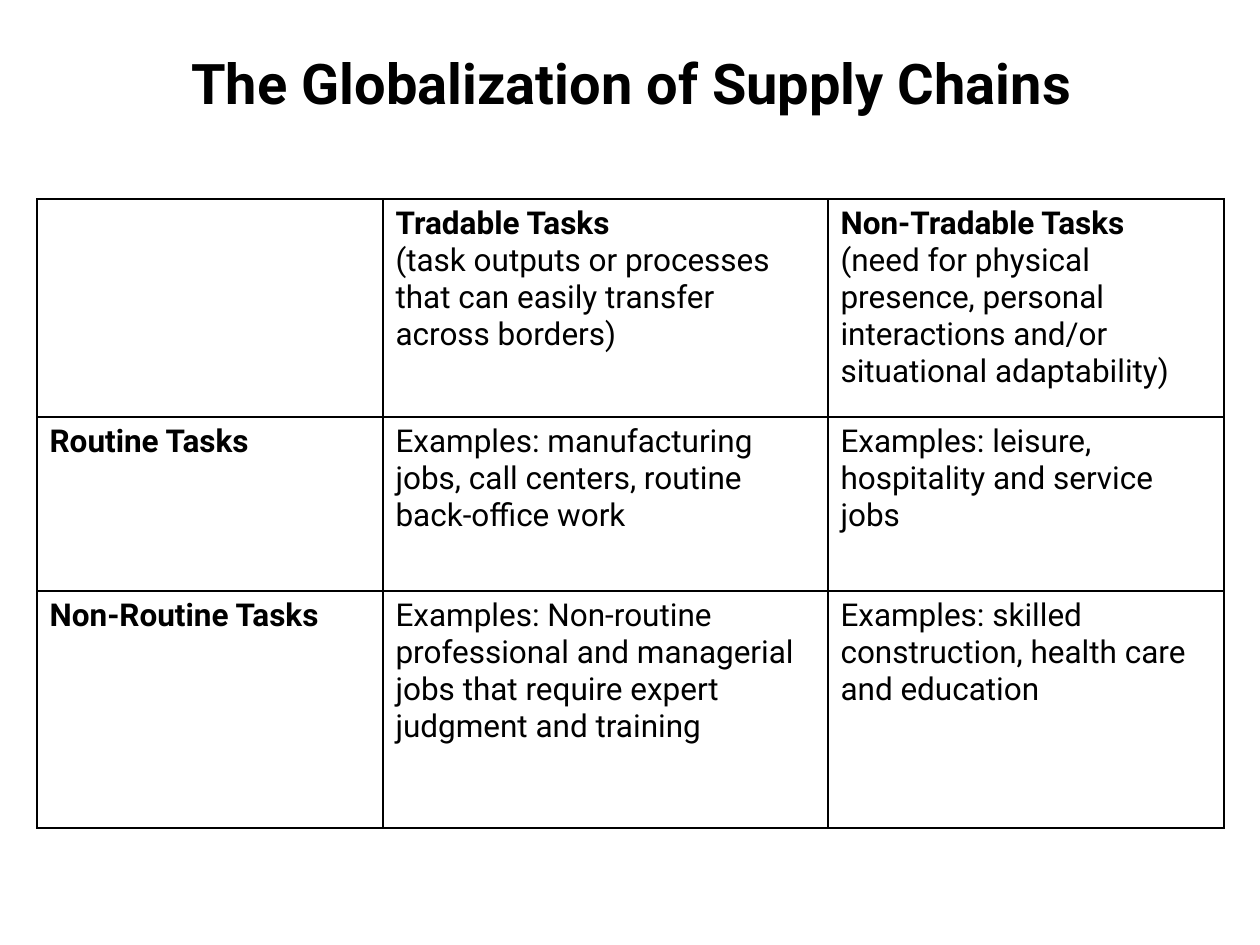
"""Build a slide with a grid of task types in global supply chains."""
from lxml import etree
from pptx import Presentation
from pptx.dml.color import RGBColor
from pptx.enum.text import MSO_ANCHOR, PP_ALIGN
from pptx.oxml.ns import qn
from pptx.util import Pt

TITLE = "The Globalization of Supply Chains"
# Each cell is a list of (text, bold) paragraphs.
GRID = [
    [
        [],
        [("Tradable Tasks", True),
         ("(task outputs or processes that can easily transfer across borders)", False)],
        [("Non-Tradable Tasks", True),
         ("(need for physical presence, personal interactions and/or "
          "situational adaptability)", False)],
    ],
    [
        [("Routine Tasks", True)],
        [("Examples: manufacturing jobs, call centers, routine back-office work", False)],
        [("Examples: leisure, hospitality and service jobs", False)],
    ],
    [
        [("Non-Routine Tasks", True)],
        [("Examples: Non-routine professional and managerial jobs that require "
          "expert judgment and training", False)],
        [("Examples: skilled construction, health care and education", False)],
    ],
]
COLS = [346, 445, 396]
ROWS = [218, 174, 237]
LEFT, TOP = 37, 199
HEAD = (179, 42, 1008, 81)
PAGE = (1260, 945)

FONT = "Roboto"
BLACK = RGBColor(0, 0, 0)
START = PP_ALIGN.LEFT
UPPER = MSO_ANCHOR.TOP
SCALE = 914400 // 126
EDGES = ("a:lnL", "a:lnR", "a:lnT", "a:lnB")


def px(num):
    return num * SCALE


def write(frame, lines, size):
    for i, (text, bold) in enumerate(lines):
        para = frame.paragraphs[0] if i == 0 else frame.add_paragraph()
        para.alignment = START
        run = para.add_run()
        run.text = text
        font = run.font
        font.name, font.size, font.bold = FONT, Pt(size), bold
        font.color.rgb = BLACK


def rule(cell):
    props = cell._tc.get_or_add_tcPr()
    for edge in EDGES:
        line = etree.SubElement(props, qn(edge), w=str(Pt(1)))
        fill = etree.SubElement(line, qn("a:solidFill"))
        etree.SubElement(fill, qn("a:srgbClr"), val=str(BLACK))


def main():
    deck = Presentation()
    deck.slide_width, deck.slide_height = map(px, PAGE)
    slide = deck.slides.add_slide(deck.slide_layouts[6])

    table = slide.shapes.add_table(
        len(ROWS), len(COLS), px(LEFT), px(TOP), px(sum(COLS)), px(sum(ROWS))
    ).table
    table.first_row = table.horz_banding = False
    for col, width in zip(table.columns, COLS):
        col.width = px(width)
    for row, height, cells in zip(table.rows, ROWS, GRID):
        row.height = px(height)
        for cell, lines in zip(row.cells, cells):
            rule(cell)
            cell.fill.background()
            cell.vertical_anchor = UPPER
            write(cell.text_frame, lines, 18)

    frame = slide.shapes.add_textbox(*map(px, HEAD)).text_frame
    frame.word_wrap = True
    write(frame, [(TITLE, True)], 32)
    deck.save("out.pptx")


if __name__ == "__main__":
    main()
